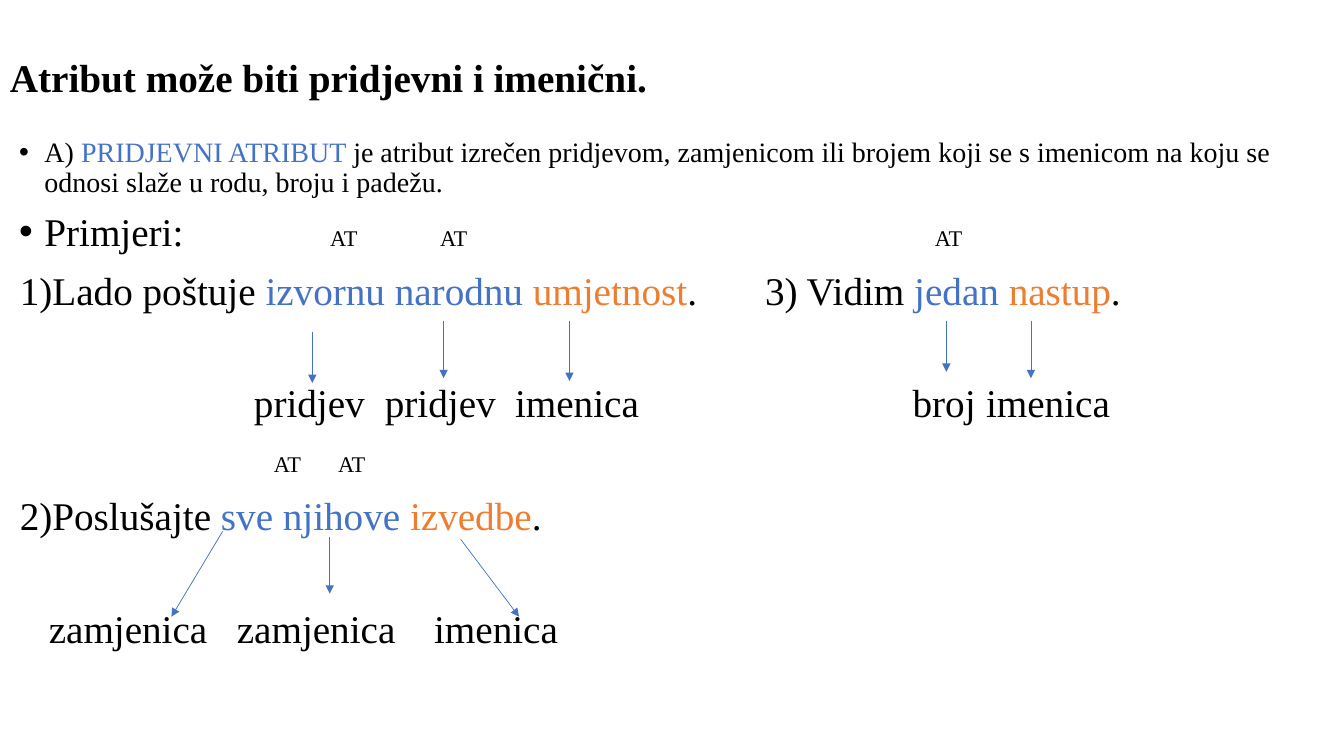
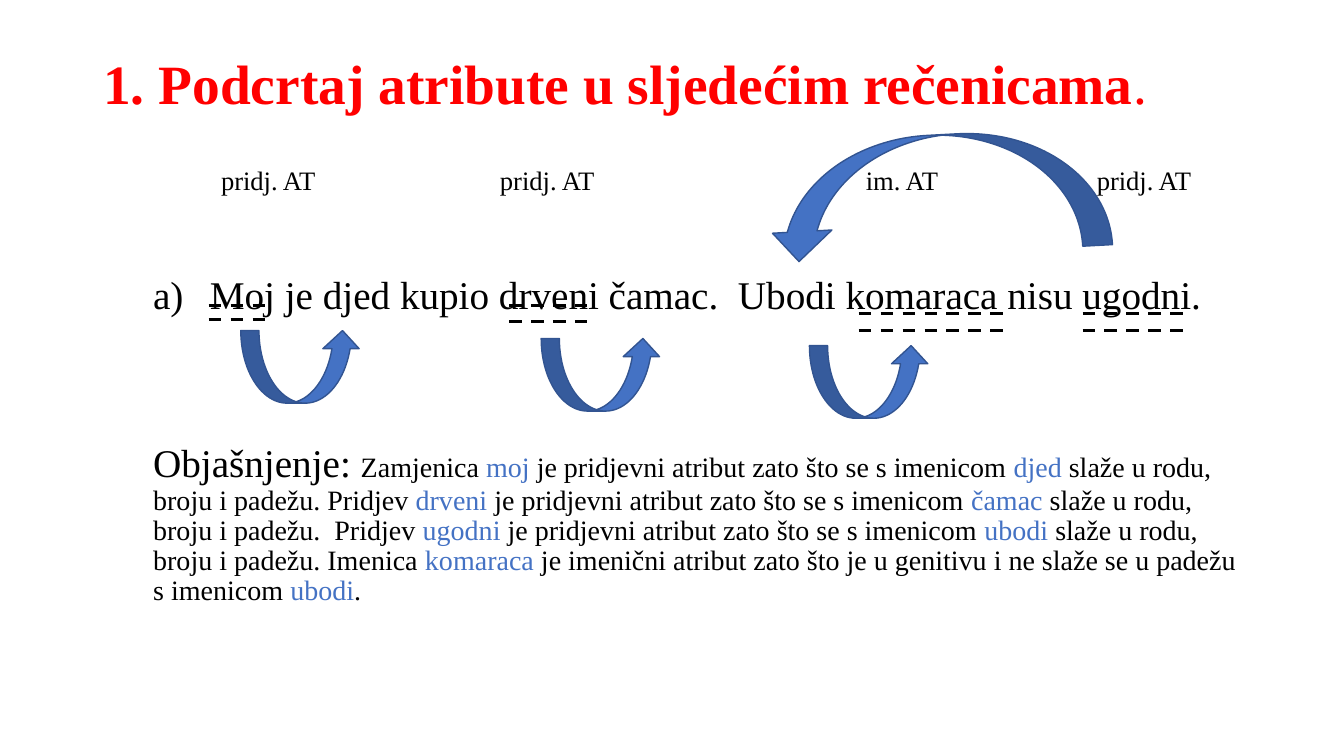
from dataclasses import dataclass

import pptx
import pptx.dml.color
import pptx.enum.dml
import pptx.enum.shapes
import pptx.oxml
import pptx.oxml.ns
import pptx.util
from pptx.util import Cm, Pt


@dataclass(frozen=True)
class Theme:
    font: str = "Times New Roman"
    ink: str = "000000"
    attribute: str = "4472C4"
    noun: str = "ED7D31"
    task: str = "FF0000"
    arc_edge: str = "325491"
    task_size: float = 39.6
    sentence_size: float = 28
    body_size: float = 20
    kind_size: float = 19
    mark_size: float = 16
    slide_width: float = 33.87
    slide_height: float = 19.05


THEME = Theme()
CM_PER_POINT = 2.54 / 72
ASCENT = 0.891
DOT = '<a:buChar {} char="•"/>'
LETTER = '<a:buAutoNum {} type="alphaLcParenR"/>'


def rgb(code):
    return pptx.dml.color.RGBColor.from_string(code)


def xml(markup):
    return pptx.oxml.parse_xml(markup.format(pptx.oxml.ns.nsdecls("a")))


def add_frame(slide, left, top, width, height):
    frame = slide.shapes.add_textbox(Cm(left), Cm(top), Cm(width), Cm(height)).text_frame
    frame.margin_left = frame.margin_right = frame.margin_top = frame.margin_bottom = 0
    frame.word_wrap = True
    return frame


def fill_paragraph(paragraph, pieces, size, bold=False):
    """Write pieces of (text, colour) or (text, colour, {font settings})."""
    for text, color, *settings in pieces:
        run = paragraph.add_run()
        run.text = text
        run.font.name = THEME.font
        run.font.size = Pt(size)
        run.font.bold = bold
        run.font.color.rgb = rgb(color)
        for name, value in (settings[0] if settings else {}).items():
            setattr(run.font, name, value)


def set_bullet(paragraph, bullet, indent):
    properties = paragraph._p.get_or_add_pPr()
    properties.set("marL", str(Cm(indent)))
    properties.set("indent", str(-Cm(indent)))
    properties.append(xml('<a:buFont {} typeface="Arial"/>' if bullet == DOT
                          else '<a:buFont {} typeface="+mj-lt"/>'))
    properties.append(xml(bullet))


def add_line_of_text(slide, pieces, left, baseline, size, bold=False):
    """Place one line so that its letters stand on the baseline."""
    length = sum(len(piece[0]) for piece in pieces) + 2
    width = min(length * size * CM_PER_POINT / 2, THEME.slide_width - left)
    top = baseline - ASCENT * size * CM_PER_POINT
    frame = add_frame(slide, left, top, width, 1.2 * size * CM_PER_POINT)
    fill_paragraph(frame.paragraphs[0], pieces, size, bold)
    return frame.paragraphs[0]


def add_labels(slide, labels, baseline, size):
    for left, text in labels:
        add_line_of_text(slide, [(text, THEME.ink)], left, baseline, size)


def add_line(slide, start, end, color, width):
    line = slide.shapes.add_connector(
        pptx.enum.shapes.MSO_CONNECTOR.STRAIGHT, *map(Cm, start + end))
    line.line.color.rgb = rgb(color)
    line.line.width = Pt(width)
    line._element.spPr.append(xml("<a:effectLst {}/>"))
    return line.line


def add_arrow(slide, start, end):
    line = add_line(slide, start, end, THEME.attribute, 0.5)
    line._get_or_add_ln().append(xml('<a:tailEnd {} type="triangle"/>'))


def add_double_underline(slide, left, right, heights):
    for height in heights:
        line = add_line(slide, (left, height), (right, height), THEME.ink, 2.25)
        line.dash_style = pptx.enum.dml.MSO_LINE.DASH


def add_arc(slide, left, top, width=3.02, height=1.83, rotation=0):
    arc = slide.shapes.add_shape(
        pptx.enum.shapes.MSO_SHAPE.CURVED_UP_ARROW,
        Cm(left), Cm(top), Cm(width), Cm(height))
    arc.rotation = rotation
    arc.shadow.inherit = False
    arc.fill.solid()
    arc.fill.fore_color.rgb = rgb(THEME.attribute)
    arc.line.color.rgb = rgb(THEME.arc_edge)
    arc.line.width = Pt(1)


def build_kinds_slide(slide):
    ink, attribute, noun = THEME.ink, THEME.attribute, THEME.noun
    size = THEME.sentence_size
    add_line_of_text(slide, [("Atribut može biti pridjevni i imenični.", ink)],
                     0.25, 2.22, size, bold=True)

    intro = add_frame(slide, 0.48, 3.48, 32.56, 2.9)
    definition, examples = intro.paragraphs[0], intro.add_paragraph()
    fill_paragraph(definition, [
        ("A) ", ink), ("PRIDJEVNI ATRIBUT ", attribute),
        ("je atribut izrečen pridjevom, zamjenicom ili brojem koji se s imenicom "
         "na koju se odnosi slaže u rodu, broju i padežu.", ink)], THEME.body_size)
    fill_paragraph(examples, [("Primjeri:", ink)], size)
    examples.space_before = Pt(10)
    for paragraph in (definition, examples):
        paragraph.line_spacing = 0.9
        set_bullet(paragraph, DOT, 0.64)

    sentences = [
        (0.5, 7.58, "1)Lado poštuje ", "izvornu narodnu ", "umjetnost"),
        (19.28, 7.58, "3) Vidim ", "jedan ", "nastup"),
        (0.5, 13.25, "2)Poslušajte ", "sve njihove ", "izvedbe"),
    ]
    for left, baseline, opening, attributes, head in sentences:
        add_line_of_text(slide, [(opening, ink), (attributes, attribute),
                                 (head, noun), (".", ink)], left, baseline, size)

    add_labels(slide, [(8.32, "AT"), (11.09, "AT"), (23.56, "AT")], 6.15, THEME.mark_size)
    add_labels(slide, [(6.9, "AT"), (8.52, "AT")], 11.84, THEME.mark_size)
    add_labels(slide, [(6.4, "pridjev"), (9.7, "pridjev"), (12.98, "imenica"),
                       (23, "broj"), (24.85, "imenica")], 10.41, size)
    add_labels(slide, [(1.23, "zamjenica"), (5.97, "zamjenica"), (10.94, "imenica")],
               16.1, size)

    for start, end in [
        ((7.87, 8.36), (7.87, 9.65)), ((11.18, 8.08), (11.18, 9.53)),
        ((14.35, 8.08), (14.35, 9.6)), ((5.61, 13.39), (4.32, 15.54)),
        ((8.31, 13.54), (8.31, 14.96)), ((11.61, 13.59), (13.08, 15.54)),
        ((23.85, 8.08), (23.85, 9.37)), ((25.98, 8.08), (25.98, 9.53)),
    ]:
        add_arrow(slide, start, end)


def build_exercise_slide(slide):
    ink, attribute = THEME.ink, THEME.attribute
    add_line_of_text(slide, [
        ("1. Podcrtaj atribute u sljedećim rečenicama", THEME.task),
        (".", THEME.task, {"bold": False})], 2.6, 2.47, THEME.task_size, bold=True)
    add_labels(slide, [(5.57, "pridj. AT"), (12.6, "pridj. AT"),
                       (21.82, "im. AT"), (27.64, "pridj. AT")], 4.74, THEME.kind_size)

    sentence = add_line_of_text(
        slide, [("Moj je djed kupio drveni čamac.  Ubodi komaraca nisu ugodni.", ink)],
        3.86, 7.69, THEME.sentence_size)
    set_bullet(sentence, LETTER, 1.43)

    explanation = add_frame(slide, 3.86, 11.18, 27.43, 4.3).paragraphs[0]
    explanation.line_spacing = 0.9
    agrees = " je pridjevni atribut zato što se s imenicom "
    fill_paragraph(explanation, [
        ("Objašnjenje: ", ink, {"size": Pt(THEME.sentence_size)}),
        ("Zamjenica ", ink), ("moj", attribute), (agrees, ink), ("djed", attribute),
        (" slaže u rodu, broju i padežu. Pridjev ", ink), ("drveni", attribute),
        (agrees, ink), ("čamac", attribute),
        (" slaže u rodu, broju i padežu.  Pridjev ", ink), ("ugodni", attribute),
        (agrees, ink), ("ubodi", attribute),
        (" slaže u rodu, broju i padežu. Imenica ", ink), ("komaraca", attribute),
        (" je imenični atribut zato što je u genitivu i ne slaže se u padežu "
         "s imenicom ", ink), ("ubodi", attribute), (".", ink)], THEME.body_size)

    for left, right, heights in [
        (5.26, 6.86, (7.7, 8.05)), (12.83, 14.96, (7.7, 8.1)),
        (21.64, 25.35, (7.9, 8.33)), (27.28, 29.92, (7.9, 8.33)),
    ]:
        add_double_underline(slide, left, right, heights)
    for left, top in [(6.07, 8.33), (13.64, 8.53), (20.4, 8.71)]:
        add_arc(slide, left, top)
    add_arc(slide, 19.3, 3.4, 8.66, 3, rotation=176.9)


def main():
    deck = pptx.Presentation()
    deck.slide_width = Cm(THEME.slide_width)
    deck.slide_height = Cm(THEME.slide_height)
    for build in (build_kinds_slide, build_exercise_slide):
        build(deck.slides.add_slide(deck.slide_layouts[6]))
    deck.save("out.pptx")


if __name__ == "__main__":
    main()
